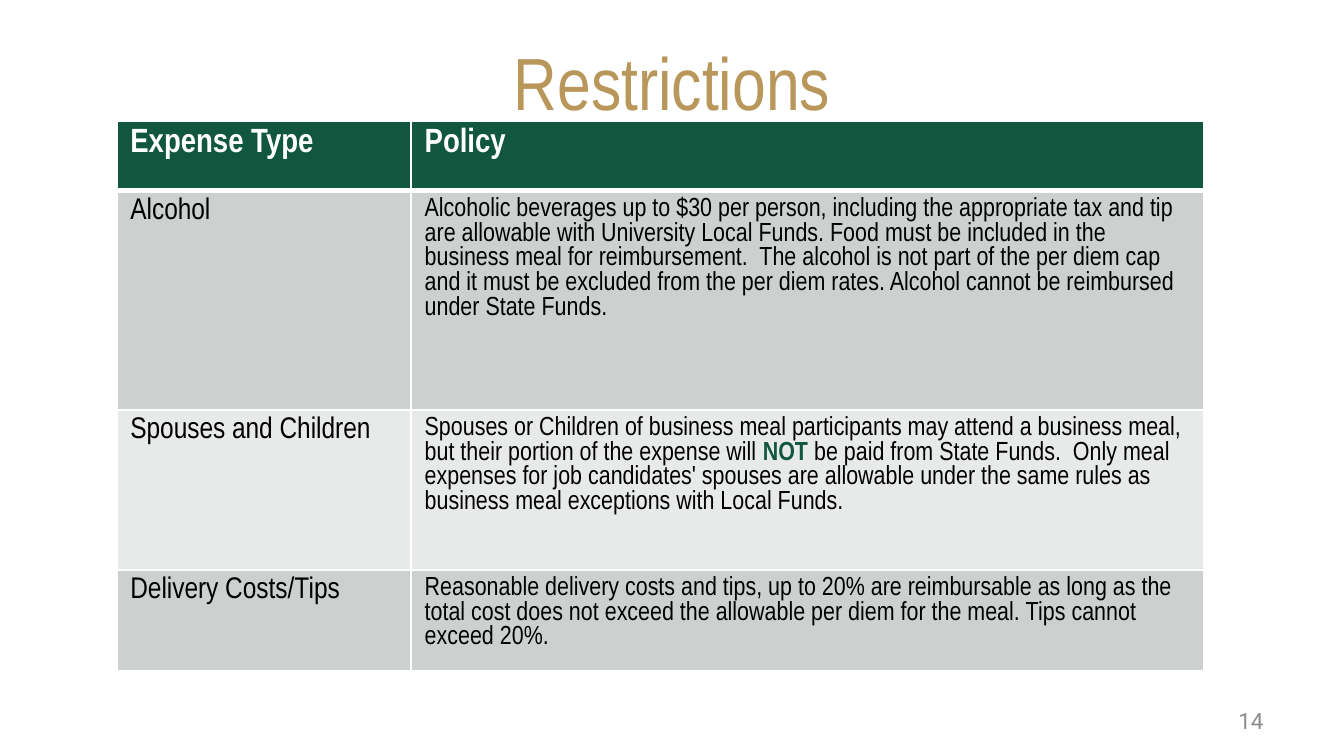
from lxml import etree
from pptx import Presentation
from pptx.dml.color import RGBColor
from pptx.enum.text import MSO_ANCHOR, PP_ALIGN
from pptx.oxml.ns import qn
from pptx.util import Inches, Pt

CENTER, RIGHT = PP_ALIGN.CENTER, PP_ALIGN.RIGHT
MIDDLE = MSO_ANCHOR.MIDDLE
TITLE_ONLY = 5
COLORS = {
    "gold": "B9975B",
    "green": "115740",
    "white": "FFFFFF",
    "black": "000000",
    "gray": "8C8C8C",
    "dark_band": "CCD1CF",
    "light_band": "E7EAE8",
}
COLUMN_WIDTHS = [2.19, 5.9]
ROW_HEIGHTS = [0.52, 1.63, 1.19, 0.75]
HEADINGS = ["Expense Type", "Policy"]
EMPHASIS = "NOT"
POLICIES = [
    ("Alcohol",
     "Alcoholic beverages up to $30 per person, including the appropriate tax and tip "
     "are allowable with University Local Funds. Food must be included in the business "
     "meal for reimbursement.  The alcohol is not part of the per diem cap and it must "
     "be excluded from the per diem rates. Alcohol cannot be reimbursed under State Funds. "),
    ("Spouses and Children",
     "Spouses or Children of business meal participants may attend a business meal, but "
     "their portion of the expense will NOT be paid from State Funds.  Only meal expenses "
     "for job candidates' spouses are allowable under the same rules as business meal "
     "exceptions with Local Funds."),
    ("Delivery Costs/Tips",
     "Reasonable delivery costs and tips, up to 20% are reimbursable as long as the total "
     "cost does not exceed the allowable per diem for the meal. Tips cannot exceed 20%."),
]


def rgb(name):
    """Return the named palette colour."""
    return RGBColor.from_string(COLORS[name])


def style(paragraph, size, color, font="Arial Narrow", bold=False):
    """Set the font of a whole paragraph."""
    paragraph.font.name = font
    paragraph.font.size = Pt(size)
    paragraph.font.bold = bold
    paragraph.font.color.rgb = rgb(color)


def place(shape, left, top, width, height):
    """Position a shape, given inches."""
    shape.left, shape.top = Inches(left), Inches(top)
    shape.width, shape.height = Inches(width), Inches(height)


def add_title(slide, text):
    """Fill and format the title placeholder."""
    title = slide.shapes.title
    place(title, 0.5, 0.23, 9, 0.74)
    frame = title.text_frame
    frame.text = text
    frame.vertical_anchor = MIDDLE
    frame.paragraphs[0].alignment = CENTER
    style(frame.paragraphs[0], 39.6, "gold")


def set_borders(cell, top=1, bottom=1):
    """Draw white lines on all four sides of a cell."""
    properties = cell._tc.get_or_add_tcPr()
    widths = {"a:lnL": 1, "a:lnR": 1, "a:lnT": top, "a:lnB": bottom}
    for position, (tag, width) in enumerate(widths.items()):
        line = etree.Element(qn(tag), w=str(Pt(width)))
        fill = etree.SubElement(line, qn("a:solidFill"))
        etree.SubElement(fill, qn("a:srgbClr"), val=COLORS["white"])
        properties.insert(position, line)


def fill_cell(cell, text, size, color, band, bold=False):
    """Write a cell's text, highlighting the emphasised word."""
    cell.fill.solid()
    cell.fill.fore_color.rgb = rgb(band)
    paragraph = cell.text_frame.paragraphs[0]
    style(paragraph, size, color, bold=bold)
    for part in filter(None, text.partition(EMPHASIS)):
        run = paragraph.add_run()
        run.text = part
        if part == EMPHASIS:
            run.font.bold = True
            run.font.color.rgb = rgb("green")


def add_policy_table(slide):
    """Add the table of expense types and their policies."""
    table = slide.shapes.add_table(
        len(ROW_HEIGHTS), len(COLUMN_WIDTHS), Inches(0.87), Inches(0.9),
        Inches(sum(COLUMN_WIDTHS)), Inches(sum(ROW_HEIGHTS))).table
    for column, width in zip(table.columns, COLUMN_WIDTHS):
        column.width = Inches(width)
    for row, height in zip(table.rows, ROW_HEIGHTS):
        row.height = Inches(height)
    for cell, heading in zip(table.rows[0].cells, HEADINGS):
        fill_cell(cell, heading, 18, "white", "green", bold=True)
        set_borders(cell, bottom=3)
    for index, policy in enumerate(POLICIES, start=1):
        band = "dark_band" if index % 2 else "light_band"
        for cell, text, size in zip(table.rows[index].cells, policy, (16, 14)):
            fill_cell(cell, text, size, "black", band)
            set_borders(cell, top=3 if index == 1 else 1)


def add_page_number(slide, number):
    """Add the page number at the lower right."""
    box = slide.shapes.add_textbox(Inches(7.17), Inches(5.21), Inches(2.33), Inches(0.3))
    frame = box.text_frame
    frame.word_wrap = True
    frame.vertical_anchor = MIDDLE
    frame.text = number
    frame.paragraphs[0].alignment = RIGHT
    style(frame.paragraphs[0], 12, "gray", font="Roboto")


def main():
    """Build and save the slide."""
    presentation = Presentation()
    presentation.slide_width = Inches(10)
    presentation.slide_height = Inches(10) * 9 // 16
    slide = presentation.slides.add_slide(presentation.slide_layouts[TITLE_ONLY])
    add_title(slide, "Restrictions")
    add_policy_table(slide)
    add_page_number(slide, "14")
    presentation.save("out.pptx")


if __name__ == "__main__":
    main()
